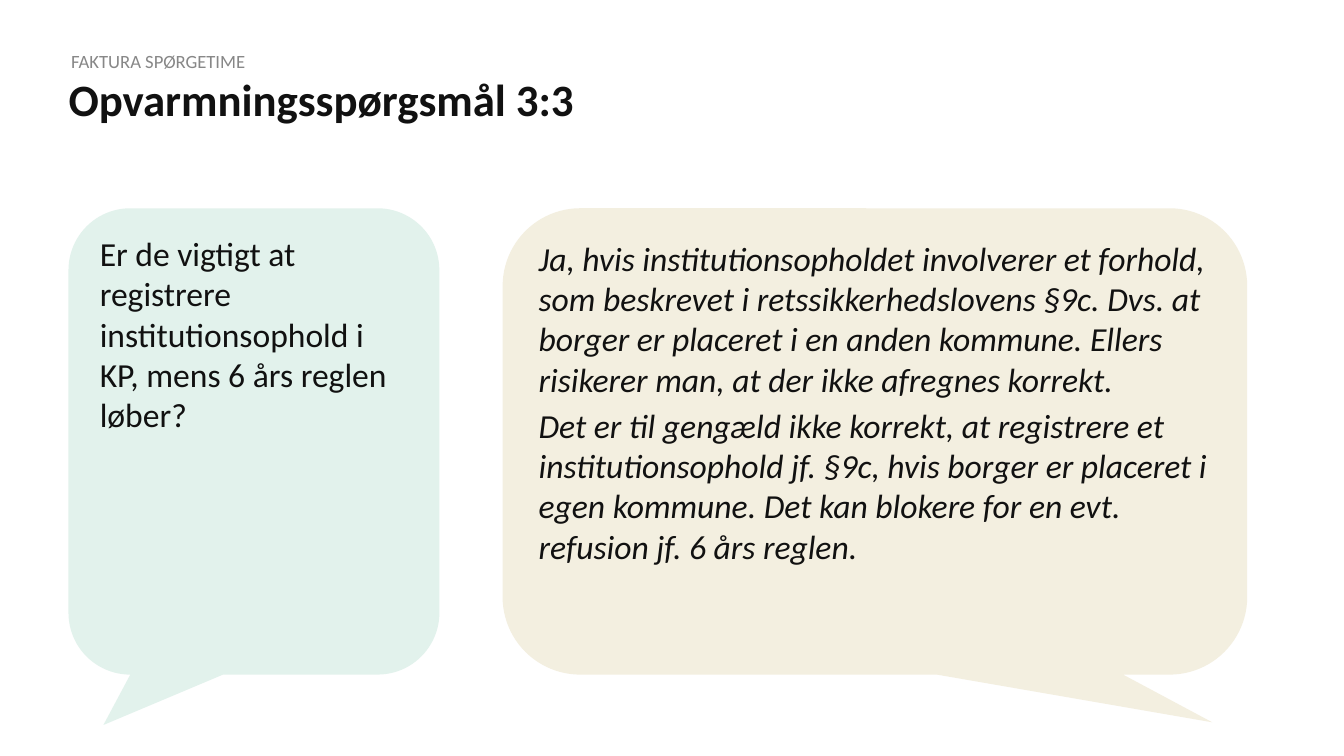
from pptx import Presentation
from pptx.dml.color import RGBColor
from pptx.enum.shapes import MSO_SHAPE
from pptx.enum.text import MSO_ANCHOR, MSO_AUTO_SIZE, PP_ALIGN
from pptx.util import Inches, Pt

COLORS = {"text": "111111", "label": "878787", "question": "E2F2EC", "answer": "F3EFE0"}
FONT = "Calibri"
LEFT = 0.51
BUBBLE_TOP, BUBBLE_HEIGHT = 1.55, 3.47

QUESTION = ["Er de vigtigt at registrere institutionsophold i KP, mens 6 års reglen løber?"]
ANSWER = [
    "Ja, hvis institutionsopholdet involverer et forhold, som beskrevet i "
    "retssikkerhedslovens §9c. Dvs. at borger er placeret i en anden kommune. "
    "Ellers risikerer man, at der ikke afregnes korrekt.",
    "Det er til gengæld ikke korrekt, at registrere et institutionsophold jf. §9c, "
    "hvis borger er placeret i egen kommune. Det kan blokere for en evt. "
    "refusion jf. 6 års reglen.",
]


def place(shape, box):
    """Move a shape to a box of left, top, width and height in inches."""
    shape.left, shape.top, shape.width, shape.height = map(Inches, box)


def write(frame, texts, size, color="text", bold=False, italic=False, after=0):
    """Fill a text frame with left-aligned paragraphs in one style."""
    frame.word_wrap = True
    frame.auto_size = MSO_AUTO_SIZE.NONE
    frame.vertical_anchor = MSO_ANCHOR.TOP
    for index, text in enumerate(texts):
        paragraph = frame.add_paragraph() if index else frame.paragraphs[0]
        paragraph.text = text
        paragraph.alignment = PP_ALIGN.LEFT
        paragraph.space_after = Pt(after)
        font = paragraph.font
        font.name, font.size = FONT, Pt(size)
        font.bold, font.italic = bold, italic
        font.color.rgb = RGBColor.from_string(COLORS[color])


def clear_margins(frame, left=0):
    """Remove the insets of a text frame, keeping an optional left one."""
    frame.margin_left = Inches(left)
    frame.margin_top = frame.margin_right = frame.margin_bottom = 0


def add_heading(slide, box):
    """Place the section label and the title below it."""
    left, top, width, height = box
    label = slide.shapes.add_textbox(0, 0, 0, 0)
    place(label, (left, top, width, 0.16))
    clear_margins(label.text_frame, 0.02)
    write(label.text_frame, ["FAKTURA SPØRGETIME"], 10, "label")

    title = slide.shapes.title
    place(title, (left, top + 0.24, 4.33, height - 0.24))
    clear_margins(title.text_frame)
    write(title.text_frame, ["Opvarmningsspørgsmål 3:3"], 24, bold=True)
    title.text_frame.paragraphs[0].line_spacing = 0.8


def add_bubble(slide, box, texts, color, tail, italic=False, after=0):
    """Add a speech bubble with its tail tip in inches from its centre."""
    bubble = slide.shapes.add_shape(
        MSO_SHAPE.ROUNDED_RECTANGULAR_CALLOUT, *map(Inches, box))
    bubble.adjustments[0] = tail[0] / box[2]
    bubble.adjustments[1] = tail[1] / box[3]
    bubble.adjustments[2] = 1 / 6
    bubble.shadow.inherit = False
    bubble.fill.solid()
    bubble.fill.fore_color.rgb = RGBColor.from_string(COLORS[color])
    bubble.line.fill.background()
    write(bubble.text_frame, texts, 18, italic=italic, after=after)


def main():
    """Build the question and answer slide."""
    presentation = Presentation()
    presentation.slide_width = Inches(10)
    presentation.slide_height = presentation.slide_width * 9 // 16
    slide = presentation.slides.add_slide(presentation.slide_layouts[5])
    add_heading(slide, (LEFT, 0.37, 4.49, 0.95))
    add_bubble(slide, (3.74, BUBBLE_TOP, 5.54, BUBBLE_HEIGHT), ANSWER, "answer",
               (2.51, 2.09), italic=True, after=3)
    add_bubble(slide, (LEFT, BUBBLE_TOP, 2.76, BUBBLE_HEIGHT), QUESTION, "question",
               (-1.12, 2.11))
    presentation.save("out.pptx")


if __name__ == "__main__":
    main()
